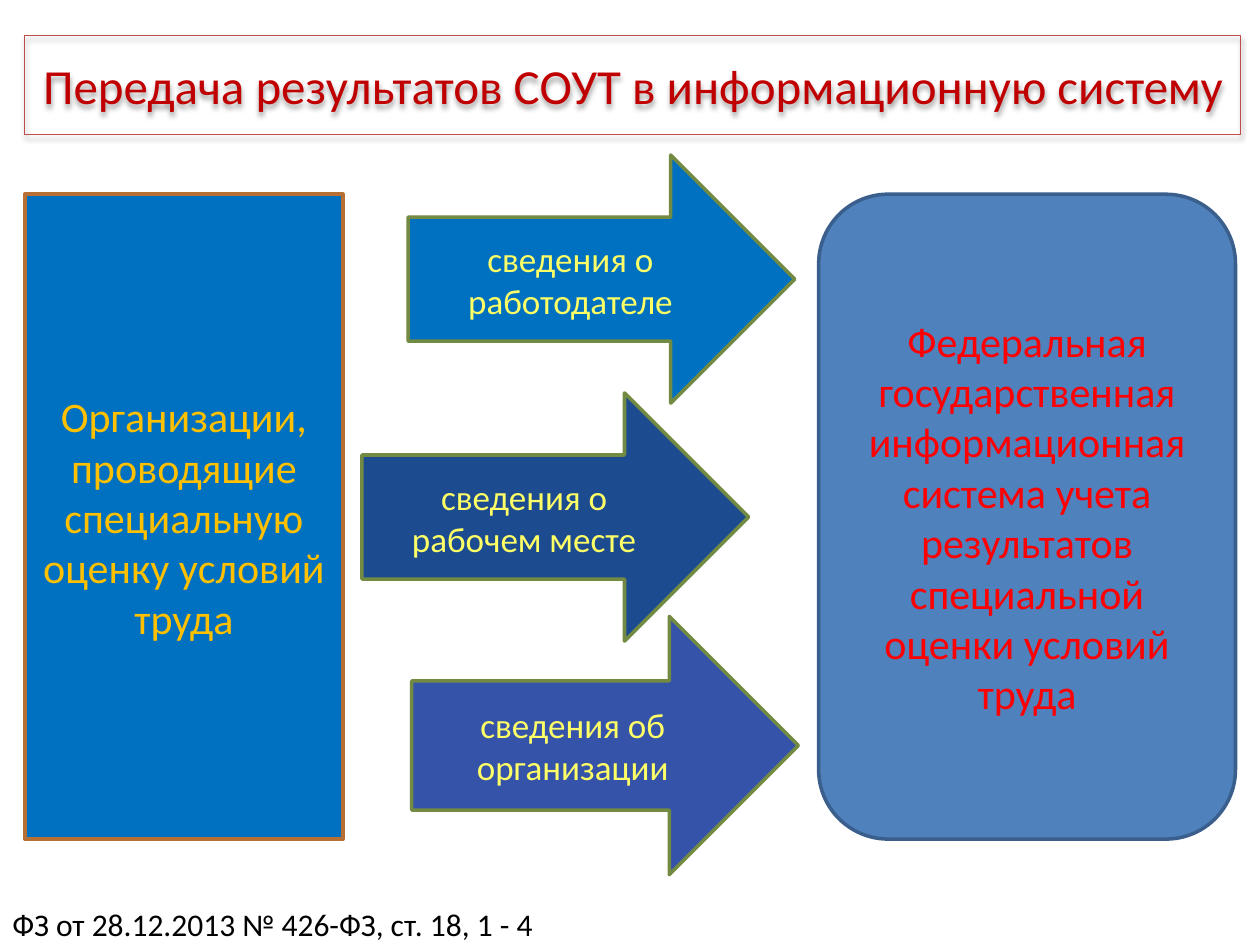
from lxml import etree
from pptx import Presentation
from pptx.dml.color import RGBColor
from pptx.enum.shapes import MSO_SHAPE as SHAPE
from pptx.enum.text import MSO_ANCHOR as ANCHOR, MSO_AUTO_SIZE as AUTO, PP_ALIGN as ALIGN
from pptx.oxml import parse_xml
from pptx.oxml.ns import nsdecls
from pptx.util import Pt

BLUE = RGBColor(0x00, 0x70, 0xC0)
NAVY = RGBColor(0x1C, 0x4B, 0x90)
INDIGO = RGBColor(0x35, 0x53, 0xA9)
STEEL = RGBColor(0x4F, 0x81, 0xBD)
STEEL_LINE = RGBColor(0x3A, 0x5F, 0x8C)
ORANGE_LINE = RGBColor(0xB7, 0x6F, 0x34)
GREEN_LINE = RGBColor(0x73, 0x8A, 0x42)
RED_LINE = RGBColor(0xBF, 0x4C, 0x48)
RED = RGBColor(0xFF, 0x00, 0x00)
DARK_RED = RGBColor(0xC0, 0x00, 0x00)
GOLD = RGBColor(0xFF, 0xC0, 0x00)
YELLOW = RGBColor(0xFF, 0xFF, 0x66)
BLACK = RGBColor(0x00, 0x00, 0x00)


def write(s, text, size, color, align=ALIGN.CENTER, anchor=ANCHOR.MIDDLE):
    tf = s.text_frame
    for name, value in {"word_wrap": True, "auto_size": AUTO.NONE,
                        "vertical_anchor": anchor}.items():
        setattr(tf, name, value)
    p = tf.paragraphs[0]
    p.alignment = align
    r = p.add_run()
    r.text = text
    for name, value in {"name": "Calibri", "size": Pt(size)}.items():
        setattr(r.font, name, value)
    r.font.color.rgb = color


def add_block(kind, box, fill, line, text, size, color):
    s = slide.shapes.add_shape(kind, *map(Pt, box))
    s.shadow.inherit = False
    s.fill.solid()
    s.fill.fore_color.rgb = fill
    s.line.color.rgb = line
    s.line.width = Pt(2)
    write(s, text, size, color)


prs = Presentation()
prs.slide_width, prs.slide_height = Pt(720), Pt(540)
slide = prs.slides.add_slide(prs.slide_layouts[5])

# Title with a frame and a soft shadow
title = slide.shapes.title
for name, value in {"left": 14.2, "top": 20.3, "width": 694.8, "height": 56.7}.items():
    setattr(title, name, Pt(value))
title.line.color.rgb = RED_LINE
title.line.width = Pt(0.75)
title.shadow.inherit = False
effects = title.element.spPr.find("{*}effectLst")
effects.append(parse_xml(
    f'<a:outerShdw {nsdecls("a")} blurRad="{Pt(3.1)}" dist="{Pt(1.6)}" dir="5400000" '
    'rotWithShape="0"><a:srgbClr val="000000"><a:alpha val="38000"/></a:srgbClr></a:outerShdw>'))
write(title, "Передача результатов СОУТ в информационную систему", 28, DARK_RED)

# Receiving system and sending organisations
BLOCK_TOP, BLOCK_HEIGHT = 111, 368.5
add_block(SHAPE.ROUNDED_RECTANGLE, (467.8, BLOCK_TOP, 238.2, BLOCK_HEIGHT), STEEL, STEEL_LINE,
          "Федеральная государственная информационная система учета результатов "
          "специальной оценки условий труда", 24, RED)
add_block(SHAPE.RECTANGLE, (14.2, BLOCK_TOP, 181.8, BLOCK_HEIGHT), BLUE, ORANGE_LINE,
          "Организации, проводящие специальную оценку условий труда", 24, GOLD)

# Arrows with the data passed on
for left, top, height, fill, text in (
    (233.2, 88.6, 141.8, BLUE, "сведения о работодателе"),
    (206.8, 224.6, 141.8, NAVY, "сведения о рабочем месте"),
    (235.3, 352.2, 147.6, INDIGO, "сведения об организации"),
):
    add_block(SHAPE.RIGHT_ARROW, (left, top, 221, height), fill, GREEN_LINE, text, 20, YELLOW)

# Reference to the law
note = slide.shapes.add_textbox(Pt(0), Pt(513.4), Pt(468), Pt(26.6))
write(note, "ФЗ от 28.12.2013 № 426-ФЗ, ст. 18, 1 - 4", 18, BLACK, ALIGN.LEFT, ANCHOR.TOP)
note.text_frame.auto_size = AUTO.SHAPE_TO_FIT_TEXT

prs.save("out.pptx")
